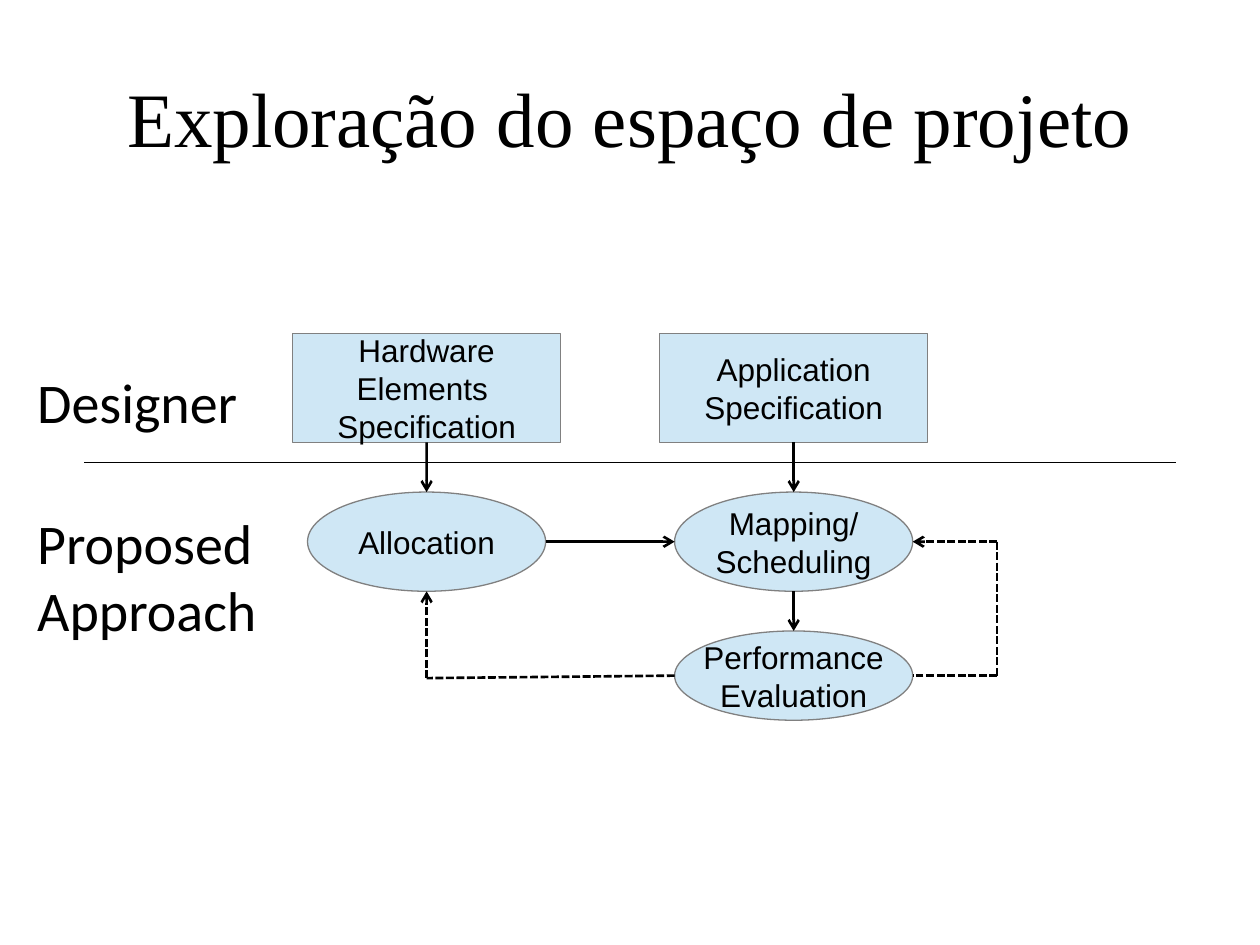
from lxml.etree import SubElement
from pptx import Presentation
from pptx.dml.color import RGBColor
from pptx.enum.dml import MSO_LINE
from pptx.enum.shapes import MSO_CONNECTOR, MSO_SHAPE
from pptx.enum.text import MSO_ANCHOR, PP_ALIGN
from pptx.oxml.ns import qn
from pptx.util import Cm, Pt

BLACK, PALE_BLUE, GREY = "000000", "CFE7F5", "808080"
TOP, BOTTOM = 0, 2


def colour(hex_value):
    return RGBColor.from_string(hex_value)


def write(frame, text, font="Arial", size=18, align=PP_ALIGN.CENTER,
          anchor=MSO_ANCHOR.MIDDLE, wrap=False):
    """Put each line of the text in its own paragraph."""
    frame.word_wrap = wrap
    frame.vertical_anchor = anchor
    for index, line in enumerate(text.split("\n")):
        para = frame.paragraphs[0] if index == 0 else frame.add_paragraph()
        para.alignment = align
        span = para.add_run()
        span.text = line
        span.font.name = font
        span.font.size = Pt(size)
        span.font.color.rgb = colour(BLACK)


class Diagram:
    def __init__(self, page):
        self.page = page

    def text(self, text, left, top, width, height, **style):
        box = self.page.shapes.add_textbox(Cm(left), Cm(top), Cm(width), Cm(height))
        write(box.text_frame, text, wrap=True, **style)

    def node(self, kind, text, centre_x, centre_y, width, height):
        shape = self.page.shapes.add_shape(
            kind, Cm(centre_x - width / 2), Cm(centre_y - height / 2),
            Cm(width), Cm(height))
        shape.shadow.inherit = False
        shape.fill.solid()
        shape.fill.fore_color.rgb = colour(PALE_BLUE)
        shape.line.color.rgb = colour(GREY)
        shape.line.width = Pt(0)
        write(shape.text_frame, text)
        return shape

    def box(self, text, centre_x, centre_y):
        return self.node(MSO_SHAPE.RECTANGLE, text, centre_x, centre_y, 5.4, 2.2)

    def oval(self, text, centre_x, centre_y, height=2):
        return self.node(MSO_SHAPE.OVAL, text, centre_x, centre_y, 4.8, height)

    def line(self, start, end, width=1.5, arrow=False, dashed=False):
        line = self.page.shapes.add_connector(
            MSO_CONNECTOR.STRAIGHT, *(Cm(value) for value in (*start, *end)))
        line.line.color.rgb = colour(BLACK)
        line.line.width = Pt(width)
        if dashed:
            line.line.dash_style = MSO_LINE.SQUARE_DOT
        if arrow:
            SubElement(line.line._get_or_add_ln(), qn("a:tailEnd"), type="arrow")
        SubElement(line._element.spPr, qn("a:effectLst"))
        return line


def main():
    deck = Presentation()
    deck.slide_width, deck.slide_height = Cm(25.4), Cm(19.05)
    diagram = Diagram(deck.slides.add_slide(deck.slide_layouts[6]))

    # Columns and rows, by their centres
    hardware_x, application_x, loop_x = 8.6, 16, 20.1
    box_y, divider_y, step_y, evaluation_y = 7.82, 9.32, 10.92, 13.62
    oval_half_width, step_half_height = 2.4, 1
    oval_left = application_x - oval_half_width
    oval_right = application_x + oval_half_width
    step_bottom = step_y + step_half_height

    # Title
    diagram.text("Exploração do espaço de projeto", 1.27, 0.76, 22.86, 3.18,
                 font="Times New Roman", size=44)

    # Specifications and the steps they feed
    columns = (
        (hardware_x, "Hardware\nElements \nSpecification", "Allocation"),
        (application_x, "Application\nSpecification", "Mapping/\nScheduling"),
    )
    for centre_x, specification, step in columns:
        box = diagram.box(specification, centre_x, box_y)
        oval = diagram.oval(step, centre_x, step_y)
        arrow = diagram.line((centre_x, box_y), (centre_x, step_y), arrow=True)
        arrow.begin_connect(box, BOTTOM)
        arrow.end_connect(oval, TOP)

    # Evaluation and the forward arrows
    evaluation = diagram.oval("Performance\nEvaluation", application_x,
                              evaluation_y, height=1.8)
    down = diagram.line((application_x, step_bottom),
                        (application_x, evaluation_y), arrow=True)
    down.end_connect(evaluation, TOP)
    diagram.line((hardware_x + oval_half_width, step_y), (oval_left, step_y),
                 arrow=True)

    # Dashed feedback: to allocation on the left, to mapping on the right
    left_corner = (hardware_x, evaluation_y + 0.05)
    feedback = (
        (left_corner, (hardware_x, step_bottom), True),
        ((oval_left, evaluation_y), left_corner, False),
        ((loop_x, evaluation_y), (oval_right, evaluation_y), False),
        ((loop_x, step_y), (loop_x, evaluation_y), False),
        ((loop_x, step_y), (oval_right, step_y), True),
    )
    for start, end, arrow in feedback:
        diagram.line(start, end, arrow=arrow, dashed=True)

    # Divider and the two roles
    diagram.line((1.7, divider_y), (23.7, divider_y), width=0.75)
    for role, top, height in (("Designer", 7.29, 1.63),
                              ("Proposed\nApproach", 10.13, 3)):
        diagram.text(role, 0.5, top, 6.6, height, font="Calibri", size=32,
                     align=PP_ALIGN.LEFT, anchor=MSO_ANCHOR.TOP)

    deck.save("out.pptx")


if __name__ == "__main__":
    main()
